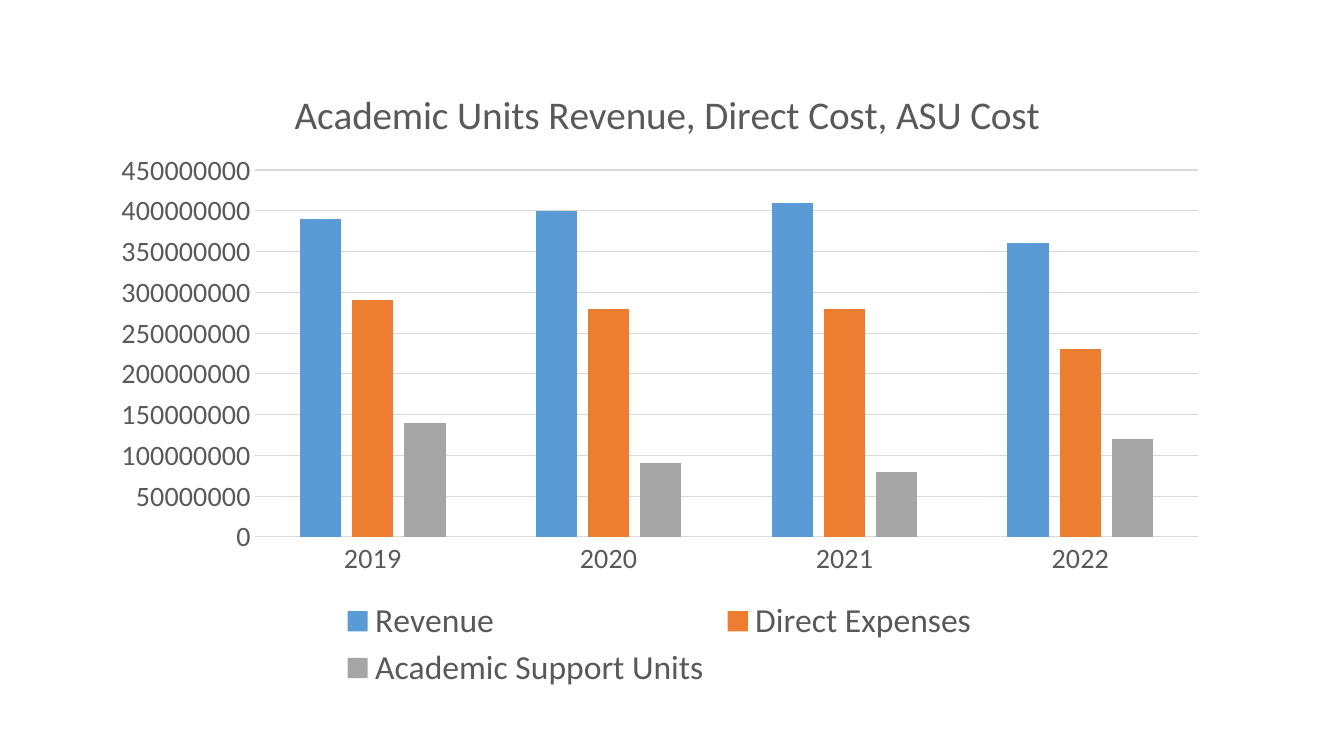
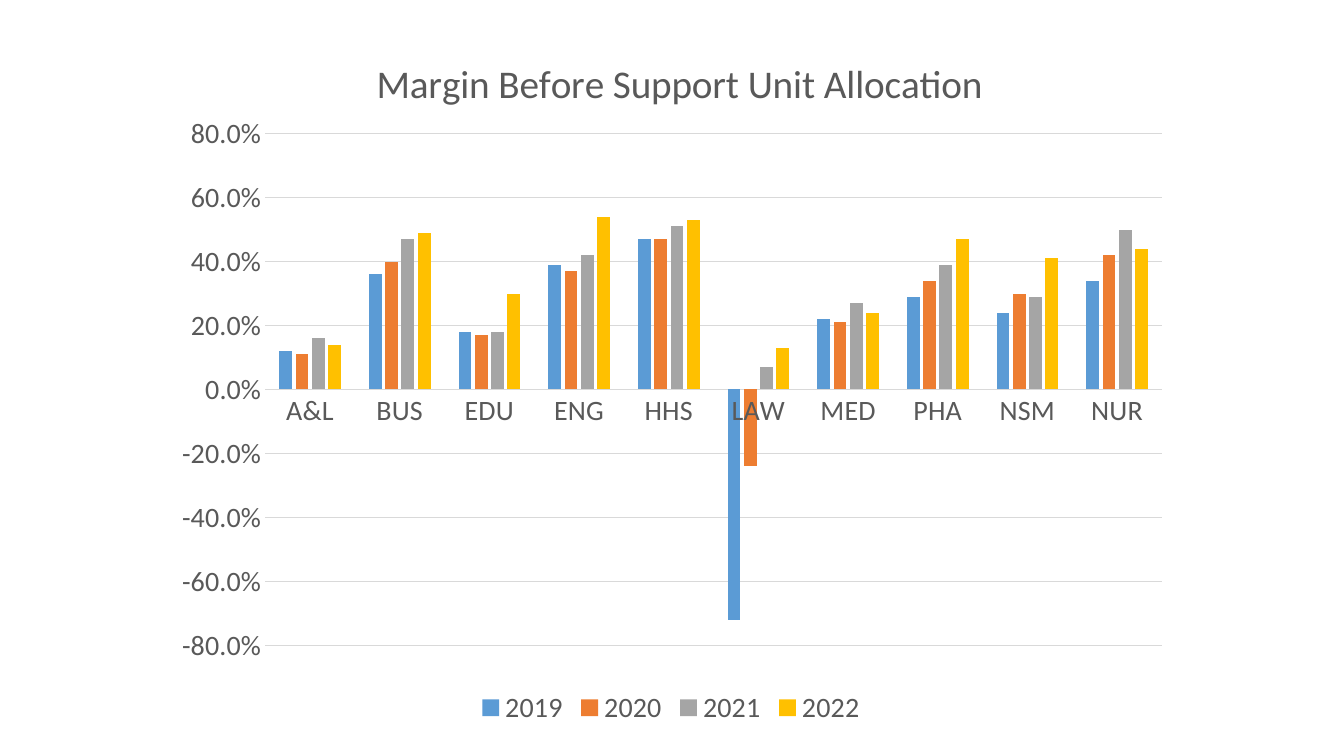
"""Build two slides with column charts of academic unit finances."""
from lxml.etree import SubElement
from pptx import Presentation
from pptx.chart.data import CategoryChartData
from pptx.dml.color import RGBColor
from pptx.enum.chart import XL_CHART_TYPE as ChartType
from pptx.enum.chart import XL_LEGEND_POSITION as LegendPosition
from pptx.enum.chart import XL_TICK_MARK as TickMark
from pptx.oxml.ns import qn
from pptx.util import Pt

FONT = "Calibri"
GRAY_TEXT = RGBColor(0x59, 0x59, 0x59)
GRID_LINE = RGBColor(0xD9, 0xD9, 0xD9)
BLUE = RGBColor(0x5B, 0x9B, 0xD5)
ORANGE = RGBColor(0xED, 0x7D, 0x31)
GRAY = RGBColor(0xA5, 0xA5, 0xA5)
GOLD = RGBColor(0xFF, 0xC0, 0x00)
SERIES_COLORS = (BLUE, ORANGE, GRAY, GOLD)
TITLE_SIZE = 28
AXIS_SIZE = 20
MILLION = 1_000_000

YEARS = ("2019", "2020", "2021", "2022")
COSTS_IN_MILLIONS = {
    "Revenue": (390, 400, 410, 360),
    "Direct Expenses": (290, 280, 280, 230),
    "Academic Support Units": (140, 90, 80, 120),
}
COSTS = {name: [value * MILLION for value in values]
         for name, values in COSTS_IN_MILLIONS.items()}

UNITS = ("A&L", "BUS", "EDU", "ENG", "HHS", "LAW", "MED", "PHA", "NSM", "NUR")
MARGINS = {
    "2019": (0.12, 0.36, 0.18, 0.39, 0.47, -0.72, 0.22, 0.29, 0.24, 0.34),
    "2020": (0.11, 0.4, 0.17, 0.37, 0.47, -0.24, 0.21, 0.34, 0.3, 0.42),
    "2021": (0.16, 0.47, 0.18, 0.42, 0.51, 0.07, 0.27, 0.39, 0.29, 0.5),
    "2022": (0.14, 0.49, 0.3, 0.54, 0.53, 0.13, 0.24, 0.47, 0.41, 0.44),
}


def format_font(font, size, color=GRAY_TEXT, bold=False):
    """Give a font its face, size, colour and weight."""
    font.name = FONT
    font.size = Pt(size)
    font.color.rgb = color
    font.bold = bold


def write_text(text_frame, text, **font_format):
    """Write one formatted run into a text frame."""
    run = text_frame.paragraphs[0].add_run()
    run.text = text
    format_font(run.font, **font_format)


def format_line(line):
    """Draw a thin light line."""
    line.color.rgb = GRID_LINE
    line.width = Pt(0.75)


def place_part(chart, tag, index, frame, box):
    """Fix a chart part at a box given in slide points."""
    part = chart.element.find(".//" + qn(tag))
    for old_layout in part.findall(qn("c:layout")):
        part.remove(old_layout)
    layout = SubElement(part, qn("c:layout"))
    part.insert(index, layout)
    manual = SubElement(layout, qn("c:manualLayout"))
    left, top, width, height = frame
    fractions = [(box[0] - left) / width, (box[1] - top) / height]
    if len(box) == 4:
        fractions += [box[2] / width, box[3] / height]
    settings = [("xMode", "edge"), ("yMode", "edge")]
    settings += zip("xywh", fractions)
    if tag == "c:plotArea":
        settings.insert(0, ("layoutTarget", "inner"))
    for name, value in settings:
        SubElement(manual, qn("c:" + name)).set("val", str(value))


def format_axes(chart, low, high, step, number_format):
    """Style both axes and scale the value axis."""
    for axis in (chart.category_axis, chart.value_axis):
        axis.major_tick_mark = axis.minor_tick_mark = TickMark.NONE
        format_font(axis.tick_labels.font, AXIS_SIZE)
    format_line(chart.category_axis.format.line)
    values = chart.value_axis
    values.minimum_scale = low
    values.maximum_scale = high
    values.major_unit = step
    values.format.line.fill.background()
    values.has_major_gridlines = True
    format_line(values.major_gridlines.format.line)
    values.tick_labels.number_format = number_format
    values.tick_labels.number_format_is_linked = False


def add_column_chart(slide, frame, categories, series, title, title_at,
                     plot_box, scale, number_format, legend_size,
                     legend_box=None):
    """Add a titled clustered column chart with a legend below."""
    data = CategoryChartData(number_format=number_format)
    data.categories = categories
    for name, values in series.items():
        data.add_series(name, values)
    chart = slide.shapes.add_chart(
        ChartType.COLUMN_CLUSTERED, *map(Pt, frame), data).chart
    format_font(chart.font, AXIS_SIZE)

    chart.has_title = True
    write_text(chart.chart_title.text_frame, title, size=TITLE_SIZE)
    chart.chart_title.include_in_layout = False
    place_part(chart, "c:title", 1, frame, title_at)

    plot = chart.plots[0]
    plot.vary_by_categories = False
    plot.gap_width = 219
    plot.overlap = -27
    for column, color in zip(plot.series, SERIES_COLORS):
        column.invert_if_negative = False
        column.format.fill.solid()
        column.format.fill.fore_color.rgb = color
    format_axes(chart, *scale, number_format)
    place_part(chart, "c:plotArea", 0, frame, plot_box)

    chart.has_legend = True
    chart.legend.position = LegendPosition.BOTTOM
    chart.legend.include_in_layout = False
    format_font(chart.legend.font, legend_size)
    if legend_box:
        place_part(chart, "c:legend", 1, frame, legend_box)


def main():
    """Build and save the presentation."""
    presentation = Presentation()
    presentation.slide_width = Pt(960)
    presentation.slide_height = Pt(540)
    blank = presentation.slide_layouts[6]

    add_column_chart(
        presentation.slides.add_slide(blank), (70.5, 36, 800.5, 462),
        YEARS, COSTS, "Academic Units Revenue, Direct Cost, ASU Cost",
        title_at=(205.5, 58), plot_box=(182, 121.5, 674, 262),
        scale=(0, 450 * MILLION, 50 * MILLION), number_format="General",
        legend_size=24, legend_box=(239, 425, 464, 71))

    add_column_chart(
        presentation.slides.add_slide(blank), (115, 18.5, 728.5, 503.5),
        UNITS, MARGINS, "Margin Before Support Unit Allocation",
        title_at=(264, 36), plot_box=(189.5, 95.5, 640.5, 365.5),
        scale=(-0.8, 0.8, 0.2), number_format="0.0%", legend_size=20)

    presentation.save("out.pptx")


if __name__ == "__main__":
    main()
